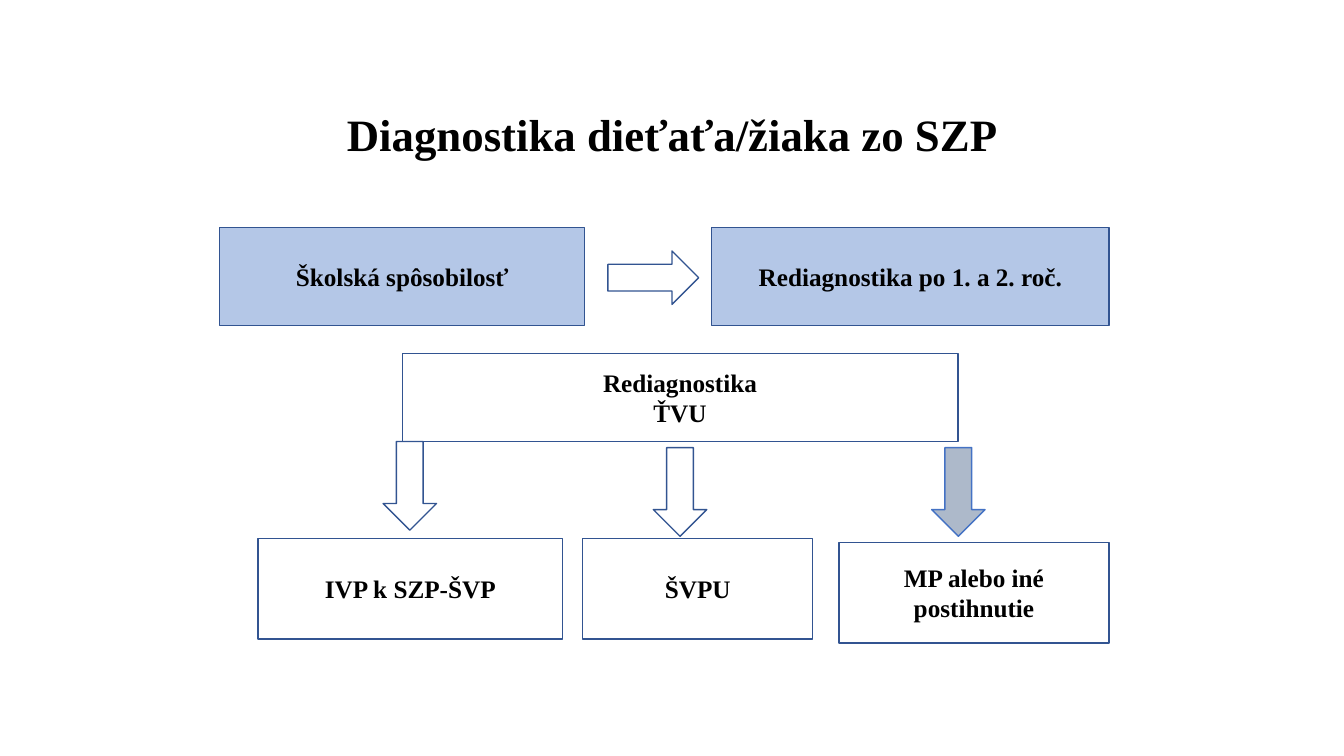
import pptx
import pptx.util
import pptx.dml.color
import pptx.enum.shapes
import pptx.enum.text
from dataclasses import dataclass

Inches = pptx.util.Inches
Pt = pptx.util.Pt
Shape = pptx.enum.shapes.MSO_SHAPE


@dataclass(frozen=True)
class Theme:
    font: str = "Times New Roman"
    title_size: int = 32
    label_size: int = 18
    ink: str = "000000"
    plain: str = "FFFFFF"
    blue: str = "B4C7E7"
    grey: str = "ADB9CA"
    outline: str = "325491"
    bright_outline: str = "4472C4"
    outline_width: int = 1


theme = Theme()

heading = "Diagnostika dieťaťa/žiaka zo SZP"
heading_box = (0.92, 0.4, 11.5, 1.45)
heading_drop = 0.51

stages = [
    (["Školská spôsobilosť"], (2.18, 2.26, 3.62, 0.97), theme.blue),
    (["Rediagnostika po 1. a 2. roč."], (7.06, 2.26, 3.94, 0.97), theme.blue),
    (["Rediagnostika", "ŤVU"], (3.99, 3.51, 5.51, 0.87), theme.plain),
]
outcomes = [
    ("IVP k SZP-ŠVP", (2.56, 5.34, 3.02, 1), (3.8, 4.38), theme.plain, theme.outline),
    ("ŠVPU", (5.78, 5.34, 2.28, 1), (6.48, 4.44), theme.plain, theme.outline),
    ("MP alebo iné postihnutie", (8.32, 5.38, 2.68, 1), (9.24, 4.44),
     theme.grey, theme.bright_outline),
]
next_stage_arrow = (6.03, 2.49, 0.9, 0.53)
outcome_arrow_size = (0.53, 0.88)


def rgb(colour):
    return pptx.dml.color.RGBColor.from_string(colour)


def write(frame, lines, size):
    frame.word_wrap = True
    frame.vertical_anchor = pptx.enum.text.MSO_ANCHOR.MIDDLE
    for index, line in enumerate(lines):
        paragraph = frame.add_paragraph() if index else frame.paragraphs[0]
        paragraph.alignment = pptx.enum.text.PP_ALIGN.CENTER
        run = paragraph.add_run()
        run.text = line
        run.font.name = theme.font
        run.font.size = Pt(size)
        run.font.bold = True
        run.font.color.rgb = rgb(theme.ink)


def draw(slide, preset, box, fill, outline=theme.outline):
    figure = slide.shapes.add_shape(preset, *map(Inches, box))
    figure.shadow.inherit = False
    figure.fill.solid()
    figure.fill.fore_color.rgb = rgb(fill)
    figure.line.color.rgb = rgb(outline)
    figure.line.width = Pt(theme.outline_width)
    return figure


def draw_box(slide, lines, box, fill):
    write(draw(slide, Shape.RECTANGLE, box, fill).text_frame, lines, theme.label_size)


def main():
    deck = pptx.Presentation()
    deck.slide_width, deck.slide_height = Inches(13.33), Inches(7.5)
    slide = deck.slides.add_slide(deck.slide_layouts[5])

    title = slide.shapes.title
    title.left, title.top, title.width, title.height = map(Inches, heading_box)
    title.text_frame.auto_size = pptx.enum.text.MSO_AUTO_SIZE.NONE
    title.text_frame.margin_top = Inches(heading_drop)
    write(title.text_frame, [heading], theme.title_size)
    title.text_frame.paragraphs[0].line_spacing = 0.9

    for lines, box, fill in stages:
        draw_box(slide, lines, box, fill)
    draw(slide, Shape.RIGHT_ARROW, next_stage_arrow, theme.plain)

    for outcome, box, arrow_corner, arrow_fill, arrow_outline in outcomes:
        draw(slide, Shape.DOWN_ARROW, arrow_corner + outcome_arrow_size,
             arrow_fill, arrow_outline)
        draw_box(slide, [outcome], box, theme.plain)

    deck.save("out.pptx")


if __name__ == "__main__":
    main()
